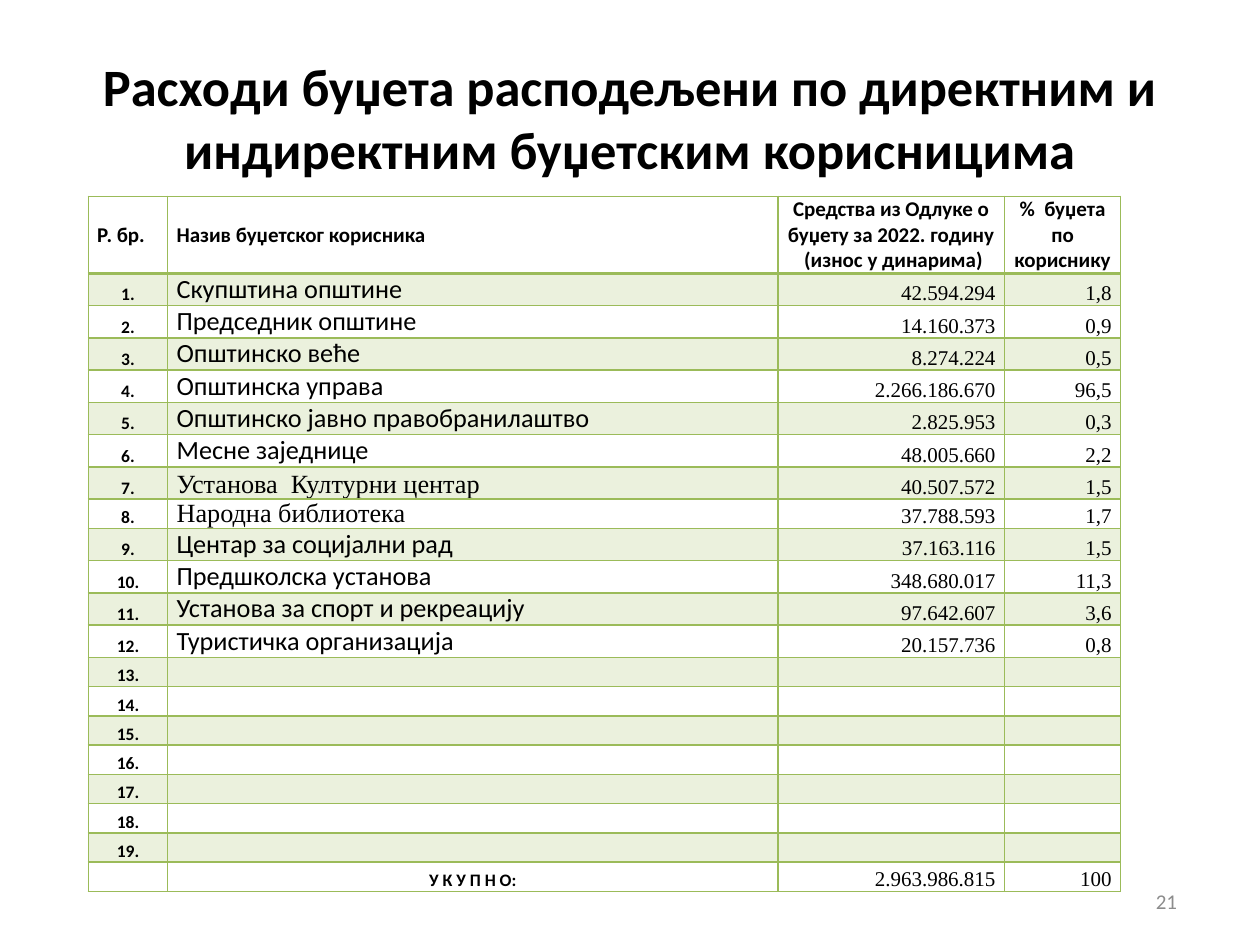
"""Builds the slide on budget spending by direct and indirect budget users."""
from dataclasses import dataclass

from lxml import etree
from pptx import Presentation
from pptx import util as u
from pptx.dml.color import RGBColor
from pptx.enum import text
from pptx.oxml import ns

LEFT, CENTER, RIGHT = text.PP_ALIGN.LEFT, text.PP_ALIGN.CENTER, text.PP_ALIGN.RIGHT
MIDDLE, BOTTOM = text.MSO_ANCHOR.MIDDLE, text.MSO_ANCHOR.BOTTOM


@dataclass(frozen=True)
class Theme:
    sans: str = "Calibri"
    serif: str = "Times New Roman"
    ink: str = "000000"
    muted: str = "8C8C8C"
    green: str = "9BBB59"
    band_alpha: int = 20
    title: int = 30
    name: int = 15
    body: int = 12
    number: int = 10


THEME = Theme()

TITLE = "Расходи буџета расподељени по директним и индиректним буџетским корисницима"
HEADER = [
    ("Р. бр.", LEFT),
    ("Назив буџетског корисника", LEFT),
    ("Средства из Одлуке о буџету за 2022. годину  (износ у динарима)", CENTER),
    ("%  буџета по кориснику", CENTER),
]
USERS = [
    ("Скупштина општине", "42.594.294", "1,8"),
    ("Председник општине", "14.160.373", "0,9"),
    ("Општинско веће", "8.274.224", "0,5"),
    ("Општинска управа", "2.266.186.670", "96,5"),
    ("Општинско јавно правобранилаштво", "2.825.953", "0,3"),
    ("Месне заједнице", "48.005.660", "2,2"),
    ("Установа  Културни центар", "40.507.572", "1,5"),
    ("Народна библиотека", "37.788.593", "1,7"),
    ("Центар за социјални рад", "37.163.116", "1,5"),
    ("Предшколска установа", "348.680.017", "11,3"),
    ("Установа за спорт и рекреацију", "97.642.607", "3,6"),
    ("Туристичка организација", "20.157.736", "0,8"),
]
SERIF_NAMES = {"Установа  Културни центар", "Народна библиотека"}
TOTAL = ("У К У П Н О:", "2.963.986.815", "100")
NUMBERED_ROWS = 19
COLUMNS = [1.6, 12.3, 4.57, 2.34]
HEADER_HEIGHT, NAME_HEIGHT, SLIM_HEIGHT = 1.55, 0.65, 0.59


def write(tf, content, size=THEME.body, font=THEME.sans, color=THEME.ink,
          bold=False, align=LEFT):
    p = tf.paragraphs[0]
    p.alignment = align
    if not content:
        etree.SubElement(p._p, ns.qn("a:endParaRPr"), sz=str(size * 100))
        return
    r = p.add_run()
    r.text = content
    r.font.size = u.Pt(size)
    r.font.name = font
    r.font.bold = bold
    r.font.color.rgb = RGBColor.from_string(color)


class SlideBuilder:
    def __init__(self, prs, theme):
        self.theme = theme
        self.slide = prs.slides.add_slide(prs.slide_layouts[5])

    def title(self, content, left, top, width, height):
        sp = self.slide.shapes.title
        sp.left, sp.top, sp.width, sp.height = map(u.Cm, (left, top, width, height))
        sp.text_frame.vertical_anchor = MIDDLE
        write(sp.text_frame, content, size=self.theme.title, bold=True, align=CENTER)

    def label(self, content, left, top, width, height, **style):
        sp = self.slide.shapes.add_textbox(*map(u.Cm, (left, top, width, height)))
        tf = sp.text_frame
        tf.word_wrap = True
        tf.vertical_anchor = MIDDLE
        write(tf, content, **style)

    def table(self, left, top, columns, rows):
        frame = self.slide.shapes.add_table(
            len(rows), len(columns), u.Cm(left), u.Cm(top),
            u.Cm(sum(columns)), u.Cm(sum(height for height, _ in rows)))
        table = frame.table
        table.first_row = table.horz_banding = False
        for column, width in zip(table.columns, columns):
            column.width = u.Cm(width)
        for i, (height, cells) in enumerate(rows):
            table.rows[i].height = u.Cm(height)
            banded = i % 2 == 1 and i <= NUMBERED_ROWS
            for j, (content, style) in enumerate(cells):
                self.cell(table.cell(i, j), content, style, i, banded)

    def cell(self, cell, content, style, row, banded):
        cell.margin_left = cell.margin_right = u.Cm(0.18)
        cell.margin_top = cell.margin_bottom = 0
        cell.vertical_anchor = BOTTOM if row else MIDDLE
        self.borders(cell, top=2 if row == 1 else 1, bottom=1 if row else 2)
        if banded:
            cell.fill.solid()
            cell.fill.fore_color.rgb = RGBColor.from_string(self.theme.green)
            color = cell._tc.tcPr.find(ns.qn("a:solidFill"))[0]
            etree.SubElement(color, ns.qn("a:alpha"), val=str(self.theme.band_alpha * 1000))
        else:
            cell.fill.background()
        write(cell.text_frame, content, **style)

    def borders(self, cell, top, bottom):
        tcPr = cell._tc.get_or_add_tcPr()
        for side, width in zip("LRTB", (1, 1, top, bottom)):
            line = etree.SubElement(tcPr, ns.qn(f"a:ln{side}"), w=str(u.Pt(width)))
            fill = etree.SubElement(line, ns.qn("a:solidFill"))
            etree.SubElement(fill, ns.qn("a:srgbClr"), val=self.theme.green)


def budget_rows(theme):
    number = dict(size=theme.number, bold=True, align=CENTER)
    amount = dict(font=theme.serif, align=RIGHT)
    rows = [(HEADER_HEIGHT, [(label, dict(bold=True, align=align)) for label, align in HEADER])]
    blanks = [("", "", "")] * (NUMBERED_ROWS - len(USERS))
    for n, (name, money, share) in enumerate(USERS + blanks, 1):
        font = theme.serif if name in SERIF_NAMES else theme.sans
        size = theme.name if name else theme.number
        slim = not name or name == "Народна библиотека"
        rows.append((SLIM_HEIGHT if slim else NAME_HEIGHT, [
            (f"{n}.", number), (name, dict(size=size, font=font)),
            (money, amount), (share, amount)]))
    name, money, share = TOTAL
    rows.append((SLIM_HEIGHT, [("", number), (name, number), (money, amount), (share, amount)]))
    return rows


def main():
    prs = Presentation()
    prs.slide_width, prs.slide_height = u.Cm(25.4), u.Cm(19.05)
    s = SlideBuilder(prs, THEME)
    s.title(TITLE, 1.27, 0.76, 22.86, 3.18)
    s.table(1.78, 3.96, COLUMNS, budget_rows(THEME))
    s.label("21", 18.06, 17.65, 5.92, 1.02, color=THEME.muted, align=RIGHT)
    prs.save("out.pptx")


if __name__ == "__main__":
    main()
